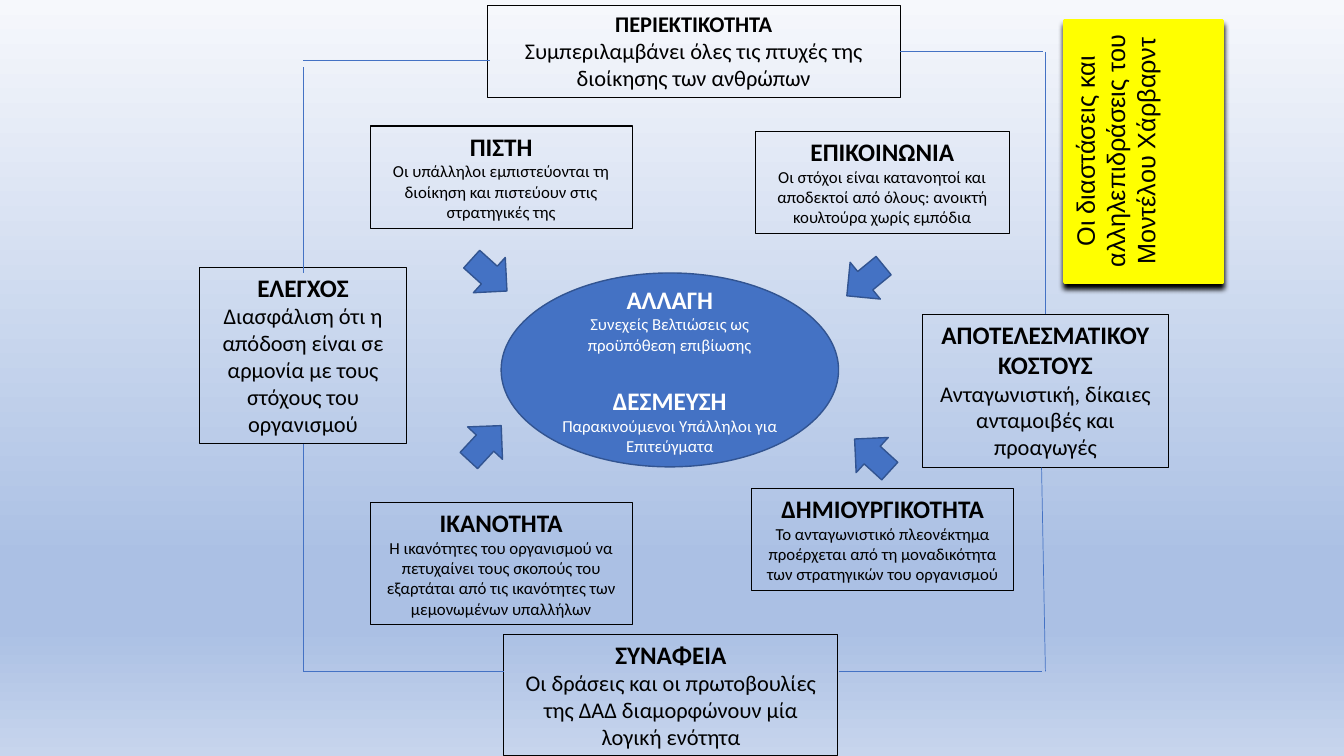
from lxml import etree
from pptx import Presentation
from pptx.dml.color import RGBColor
from pptx.enum.shapes import MSO_CONNECTOR, MSO_SHAPE
from pptx.enum.text import MSO_ANCHOR, MSO_AUTO_SIZE, PP_ALIGN
from pptx.oxml.ns import qn
from pptx.util import Pt

STRAIGHT = MSO_CONNECTOR.STRAIGHT
ELLIPSE = MSO_SHAPE.OVAL
ARROW = MSO_SHAPE.RIGHT_ARROW
CENTER = PP_ALIGN.CENTER
TOP, MIDDLE = MSO_ANCHOR.TOP, MSO_ANCHOR.MIDDLE
GROW = MSO_AUTO_SIZE.SHAPE_TO_FIT_TEXT
TOP_SIDE, BOTTOM_SIDE, RIGHT_SIDE = 0, 2, 3

BLACK, WHITE, YELLOW = "000000", "FFFFFF", "FFFF00"
BLUE, DARK_BLUE = "4472C4", "325491"
BACKGROUND = [(0, "F6F8FC"), (74, "ABC0E4"), (83, "ABC0E4"), (100, "C7D5ED")]


def color(hex_value):
    return RGBColor.from_string(hex_value)


class ModelSlide:
    """Holds the current slide and its style, one method per kind of element."""

    def __init__(self, slide, font="Calibri"):
        self.slide = slide
        self.shapes = slide.shapes
        self.font = font

    def background(self, stops):
        fill = self.slide.background.fill
        fill.gradient()
        fill.gradient_angle = 270
        stop_list = self.slide.element.find(".//" + qn("a:gsLst"))
        for old_stop in list(stop_list):
            stop_list.remove(old_stop)
        for percent, hex_value in stops:
            stop = etree.SubElement(stop_list, qn("a:gs"), pos=str(percent * 1000))
            etree.SubElement(stop, qn("a:srgbClr"), val=hex_value)

    def outline(self, shape, hex_value, width):
        shape.line.color.rgb = color(hex_value)
        shape.line.width = Pt(width)

    def paint(self, shape, fill, line, width):
        shape.fill.solid()
        shape.fill.fore_color.rgb = color(fill)
        self.outline(shape, line, width)
        shape.shadow.inherit = False

    def add_lines(self, frame, lines, hex_value, font=None):
        """Each line is (text, size, bold, space before)."""
        for index, (text, size, bold, gap) in enumerate(lines):
            paragraph = frame.paragraphs[0] if index == 0 else frame.add_paragraph()
            paragraph.alignment = CENTER
            paragraph.space_before = Pt(gap)
            run = paragraph.add_run()
            run.text = text
            run.font.color.rgb = color(hex_value)
            style = {"name": font or self.font, "size": Pt(size), "bold": bold}
            for name, value in style.items():
                setattr(run.font, name, value)

    def title(self, lines, place, rotation):
        title = self.shapes.title
        for name, value in zip(("left", "top", "width", "height"), place):
            setattr(title, name, Pt(value))
        title.rotation = rotation
        self.paint(title, YELLOW, YELLOW, 2.5)
        effects = title.element.spPr.find(qn("a:effectLst"))
        shadow = etree.SubElement(
            effects, qn("a:outerShdw"), blurRad=str(Pt(4)), dist=str(Pt(4)),
            dir="5400000", algn="t", rotWithShape="0")
        etree.SubElement(shadow, qn("a:srgbClr"), val=BLACK)
        frame = title.text_frame
        frame.auto_size = GROW
        frame.word_wrap = False
        frame.vertical_anchor = TOP
        self.add_lines(frame, [(line, 18, False, 0) for line in lines], BLACK, "Arial")

    def box(self, heading, body, place, heading_size=18, body_size=16):
        box = self.shapes.add_textbox(*map(Pt, place))
        self.outline(box, BLACK, 0.75)
        box.text_frame.word_wrap = True
        box.text_frame.auto_size = GROW
        self.add_lines(box.text_frame, [(heading, heading_size, True, 0),
                                        (body, body_size, False, 0)], BLACK)
        return box

    def figure(self, kind, place, rotation=0, lines=()):
        figure = self.shapes.add_shape(kind, *map(Pt, place))
        figure.rotation = rotation
        self.paint(figure, BLUE, DARK_BLUE, 1)
        figure.text_frame.vertical_anchor = MIDDLE
        self.add_lines(figure.text_frame, lines, WHITE)

    def line(self, start, end, joined=None):
        """joined is an optional (box, side) where the line starts."""
        line = self.shapes.add_connector(STRAIGHT, *map(Pt, start + end))
        if joined:
            line.begin_connect(*joined)
        self.outline(line, BLUE, 0.5)
        etree.SubElement(line.element.spPr, qn("a:effectLst"))


def main():
    deck = Presentation()
    deck.slide_width, deck.slide_height = Pt(960), Pt(540)
    model = ModelSlide(deck.slides.add_slide(deck.slide_layouts[5]))
    model.background(BACKGROUND)

    # Title, turned upright on the right
    model.title(["Οι διαστάσεις και", "αλληλεπιδράσεις του", "Μοντέλου Χάρβαρντ"],
                (703.5, 71.5, 187, 73), 270)

    # Outer ring of boxes
    coverage = model.box(
        "ΠΕΡΙΕΚΤΙΚΟΤΗΤΑ", "Συμπεριλαμβάνει όλες τις πτυχές της διοίκησης των ανθρώπων",
        (348, 4, 295, 66), heading_size=16)
    control = model.box(
        "ΕΛΕΓΧΟΣ", "Διασφάλιση ότι η απόδοση είναι σε αρμονία με τους στόχους του οργανισμού",
        (142.5, 191, 148, 126))
    model.box(
        "ΣΥΝΑΦΕΙΑ", "Οι δράσεις και οι πρωτοβουλίες της ΔΑΔ διαμορφώνουν μία λογική ενότητα",
        (360, 453, 238.5, 87))
    cost = model.box(
        "ΑΠΟΤΕΛΕΣΜΑΤΙΚΟΥ ΚΟΣΤΟΥΣ", "Ανταγωνιστική, δίκαιες ανταμοιβές και προαγωγές",
        (659, 224.5, 175.5, 109.5))

    # Lines of the outer ring
    left, right, bottom = 216.5, 746.75, 479.5
    model.line((350, 43), (left, 43))
    model.line((left, 48), (left, 195))
    model.line((643, 37), (745, 37), (coverage, RIGHT_SIDE))
    model.line((right, 224.5), (right, 37), (cost, TOP_SIDE))
    model.line((left, 317), (left, bottom), (control, BOTTOM_SIDE))
    model.line((left, bottom), (360, bottom))
    model.line((744, 334), (right, bottom))
    model.line((744, bottom), (599, bottom))

    # Inner ring of boxes
    inner_boxes = [
        ("ΠΙΣΤΗ", "Οι υπάλληλοι εμπιστεύονται τη διοίκηση και πιστεύουν στις στρατηγικές της",
         (264.5, 90, 187, 73)),
        ("ΕΠΙΚΟΙΝΩΝΙΑ", "Οι στόχοι είναι κατανοητοί και αποδεκτοί από όλους: "
         "ανοικτή κουλτούρα χωρίς εμπόδια", (539.5, 94, 181.5, 73)),
        ("ΙΚΑΝΟΤΗΤΑ", "Η ικανότητες του οργανισμού να πετυχαίνει τους σκοπούς του "
         "εξαρτάται από τις ικανότητες των μεμονωμένων υπαλλήλων", (264.5, 359, 187, 87)),
        ("ΔΗΜΙΟΥΡΓΙΚΟΤΗΤΑ", "Το ανταγωνιστικό πλεονέκτημα προέρχεται από τη μοναδικότητα "
         "των στρατηγικών του οργανισμού", (537, 349, 187, 73)),
    ]
    for heading, body, place in inner_boxes:
        model.box(heading, body, place, body_size=12)

    # Core of the model
    model.figure(ELLIPSE, (358, 195, 241, 138.5), lines=[
        ("ΑΛΛΑΓΗ", 18, True, 0),
        ("Συνεχείς Βελτιώσεις ως προϋπόθεση επιβίωσης", 12, False, 0),
        ("ΔΕΣΜΕΥΣΗ", 18, True, 22),
        ("Παρακινούμενοι Υπάλληλοι για Επιτεύγματα", 12, False, 0),
    ])

    # Arrows pointing to the core
    for x, y, rotation in [(329.5, 299.5, 312.9), (606, 308, 222.4),
                           (601, 183.5, 140.6), (332.5, 179.5, 42.1)]:
        model.figure(ARROW, (x, y, 34, 34), rotation)

    deck.save("out.pptx")


if __name__ == "__main__":
    main()
